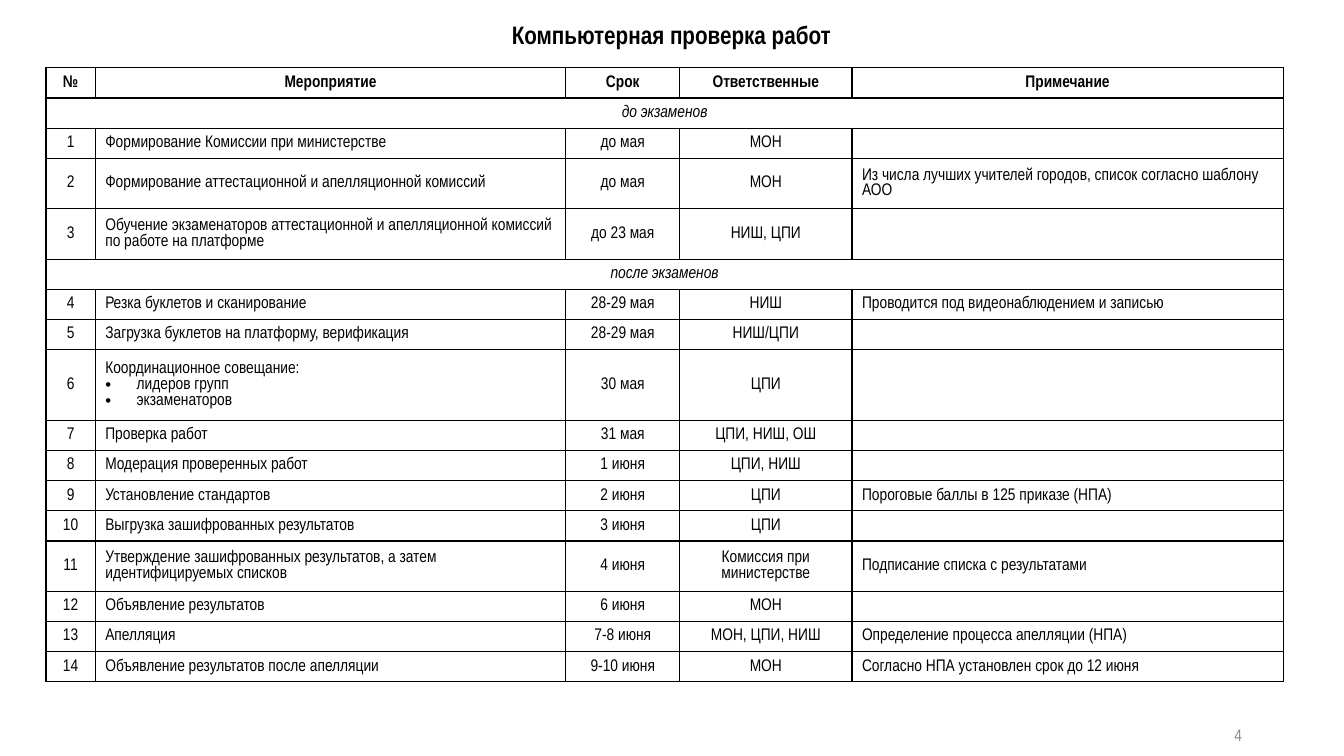
from dataclasses import dataclass

from lxml import etree
from pptx import Presentation
from pptx.dml.color import RGBColor
from pptx.enum.text import MSO_ANCHOR, MSO_AUTO_SIZE, PP_ALIGN
from pptx.oxml.ns import qn
from pptx.util import Cm, Pt

LEFT, CENTER, RIGHT = PP_ALIGN.LEFT, PP_ALIGN.CENTER, PP_ALIGN.RIGHT
MIDDLE, TOP = MSO_ANCHOR.MIDDLE, MSO_ANCHOR.TOP
NO_FIT = MSO_AUTO_SIZE.NONE

FONT = "Arial Narrow"
COLORS = {"text": "000000", "border": "000000", "number": "8C8C8C"}
COLUMN_WIDTHS = [1.24, 11.86, 2.87, 4.34, 10.87]
COLUMN_ALIGNS = [CENTER, LEFT, CENTER, CENTER, LEFT]
ROW_HEIGHTS = {1: 0.76, 2: 1.27, 3: 1.78}  # by number of text lines
BULLET_INDENT = Cm(0.79)
BORDER_WIDTH = Pt(1)


@dataclass
class Section:
    name: str
    lines: int = 1


@dataclass
class Task:
    event: str
    term: str
    owner: str
    note: str = ""
    lines: int = 1
    bullets: tuple[str, ...] = ()


HEADERS = ["№", "Мероприятие", "Срок", "Ответственные", "Примечание"]
PLAN = [
    Section("до экзаменов"),
    Task("Формирование Комиссии при министерстве", "до мая", "МОН"),
    Task("Формирование аттестационной и апелляционной комиссий", "до мая", "МОН",
         "Из числа лучших учителей городов, список согласно шаблону АОО", lines=2),
    Task("Обучение экзаменаторов аттестационной и апелляционной комиссий "
         "по работе на платформе", "до 23 мая", "НИШ, ЦПИ", lines=2),
    Section("после экзаменов"),
    Task("Резка буклетов и сканирование", "28-29 мая", "НИШ",
         "Проводится под видеонаблюдением и записью"),
    Task("Загрузка буклетов на платформу, верификация", "28-29 мая", "НИШ/ЦПИ"),
    Task("Координационное совещание:", "30 мая", "ЦПИ", lines=3,
         bullets=("лидеров групп", "экзаменаторов")),
    Task("Проверка работ", "31 мая", "ЦПИ, НИШ, ОШ"),
    Task("Модерация проверенных работ", "1 июня", "ЦПИ, НИШ"),
    Task("Установление стандартов", "2 июня", "ЦПИ",
         "Пороговые баллы в 125 приказе (НПА)"),
    Task("Выгрузка зашифрованных результатов", "3 июня", "ЦПИ"),
    Task("Утверждение зашифрованных результатов, а затем идентифицируемых списков",
         "4 июня", "Комиссия при министерстве",
         "Подписание списка с результатами", lines=2),
    Task("Объявление результатов", "6 июня", "МОН"),
    Task("Апелляция", "7-8 июня", "МОН, ЦПИ, НИШ",
         "Определение процесса апелляции (НПА)"),
    Task("Объявление результатов после апелляции", "9-10 июня", "МОН",
         "Согласно НПА установлен срок до 12 июня"),
]


def format_paragraph(para, align, size: int = 12, color: str = "text",
                     bold: bool = False, italic: bool = False) -> None:
    para.alignment = align
    font = para.font
    font.name, font.size, font.bold, font.italic = FONT, Pt(size), bold, italic
    font.color.rgb = RGBColor.from_string(COLORS[color])


def add_bullet(para) -> None:
    properties = para._p.get_or_add_pPr()
    properties.set("marL", str(BULLET_INDENT))
    properties.set("indent", str(-BULLET_INDENT))
    etree.SubElement(properties, qn("a:buFont")).set("typeface", "Arial")
    etree.SubElement(properties, qn("a:buChar")).set("char", "•")
    # Bullets come before the default run properties
    properties.append(properties.find(qn("a:defRPr")))


def format_cell(cell) -> None:
    cell.vertical_anchor = MIDDLE
    properties = cell._tc.get_or_add_tcPr()
    for side in ("lnL", "lnR", "lnT", "lnB"):
        line = etree.SubElement(properties, qn(f"a:{side}"), w=str(BORDER_WIDTH))
        fill = etree.SubElement(line, qn("a:solidFill"))
        etree.SubElement(fill, qn("a:srgbClr"), val=COLORS["border"])
    cell.fill.background()


def fill_cell(cell, text: str, align, bold: bool = False, italic: bool = False,
              bullets: tuple[str, ...] = ()) -> None:
    cell.text = "\n".join((text, *bullets))
    for index, para in enumerate(cell.text_frame.paragraphs):
        format_paragraph(para, align, bold=bold, italic=italic)
        if index:
            add_bullet(para)
        if not text:
            etree.SubElement(para._p, qn("a:endParaRPr"), sz="1200")


def place_text(box, text: str, position: tuple[float, ...], anchor, align,
               **style) -> None:
    box.left, box.top, box.width, box.height = map(Cm, position)
    frame = box.text_frame
    frame.text = text
    frame.word_wrap = True
    frame.auto_size = NO_FIT
    frame.vertical_anchor = anchor
    format_paragraph(frame.paragraphs[0], align, **style)


def add_plan(page) -> None:
    heights = [ROW_HEIGHTS[1]] + [ROW_HEIGHTS[entry.lines] for entry in PLAN]
    table = page.shapes.add_table(
        len(heights), len(HEADERS), Cm(1.16), Cm(1.71),
        Cm(sum(COLUMN_WIDTHS)), Cm(sum(heights))).table
    table.horz_banding = False
    for column, width in zip(table.columns, COLUMN_WIDTHS):
        column.width = Cm(width)
    for row, height in zip(table.rows, heights):
        row.height = Cm(height)
    for cell in table.iter_cells():
        format_cell(cell)

    # Header row
    for column, header in enumerate(HEADERS):
        fill_cell(table.cell(0, column), header, CENTER, bold=True)

    # Sections and numbered tasks
    number = 0
    for row, entry in enumerate(PLAN, start=1):
        if isinstance(entry, Section):
            table.cell(row, 0).merge(table.cell(row, len(HEADERS) - 1))
            fill_cell(table.cell(row, 0), entry.name, CENTER, italic=True)
            continue
        number += 1
        texts = [str(number), entry.event, entry.term, entry.owner, entry.note]
        for column, (text, align) in enumerate(zip(texts, COLUMN_ALIGNS)):
            bullets = entry.bullets if column == 1 else ()
            fill_cell(table.cell(row, column), text, align, bullets=bullets)


def main() -> None:
    deck = Presentation()
    deck.slide_width, deck.slide_height = Cm(33.87), Cm(19.05)
    page = deck.slides.add_slide(deck.slide_layouts[5])

    # Title
    place_text(page.shapes.title, "Компьютерная проверка работ",
               (8.46, 0.36, 16.92, 1.02), TOP, CENTER, size=18, bold=True)

    # Plan table
    add_plan(page)

    # Page number
    number_box = page.shapes.add_textbox(0, 0, 0, 0)
    place_text(number_box, "4", (23.93, 18.01, 7.62, 1.02), MIDDLE, RIGHT,
               color="number")

    deck.save("out.pptx")


if __name__ == "__main__":
    main()
